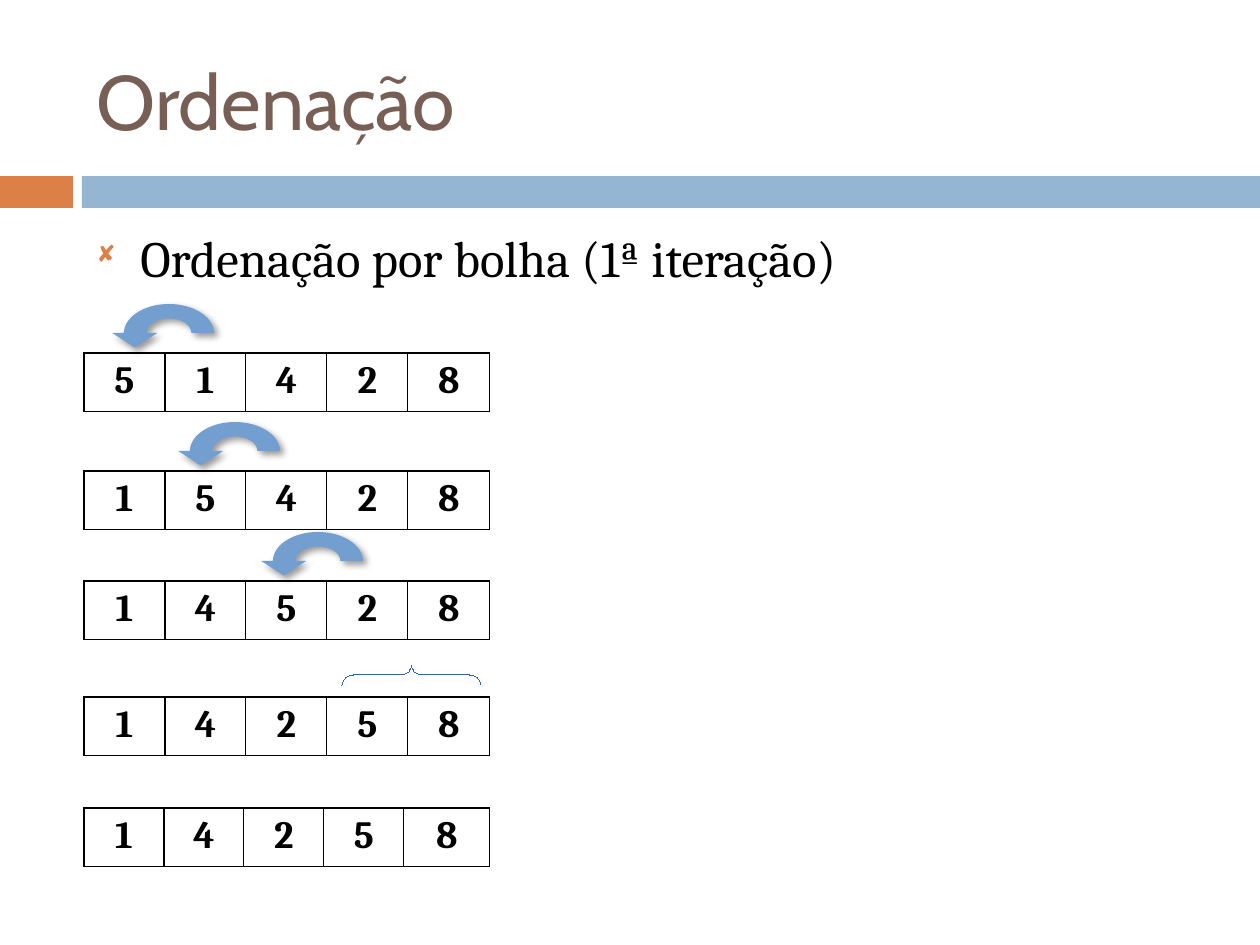
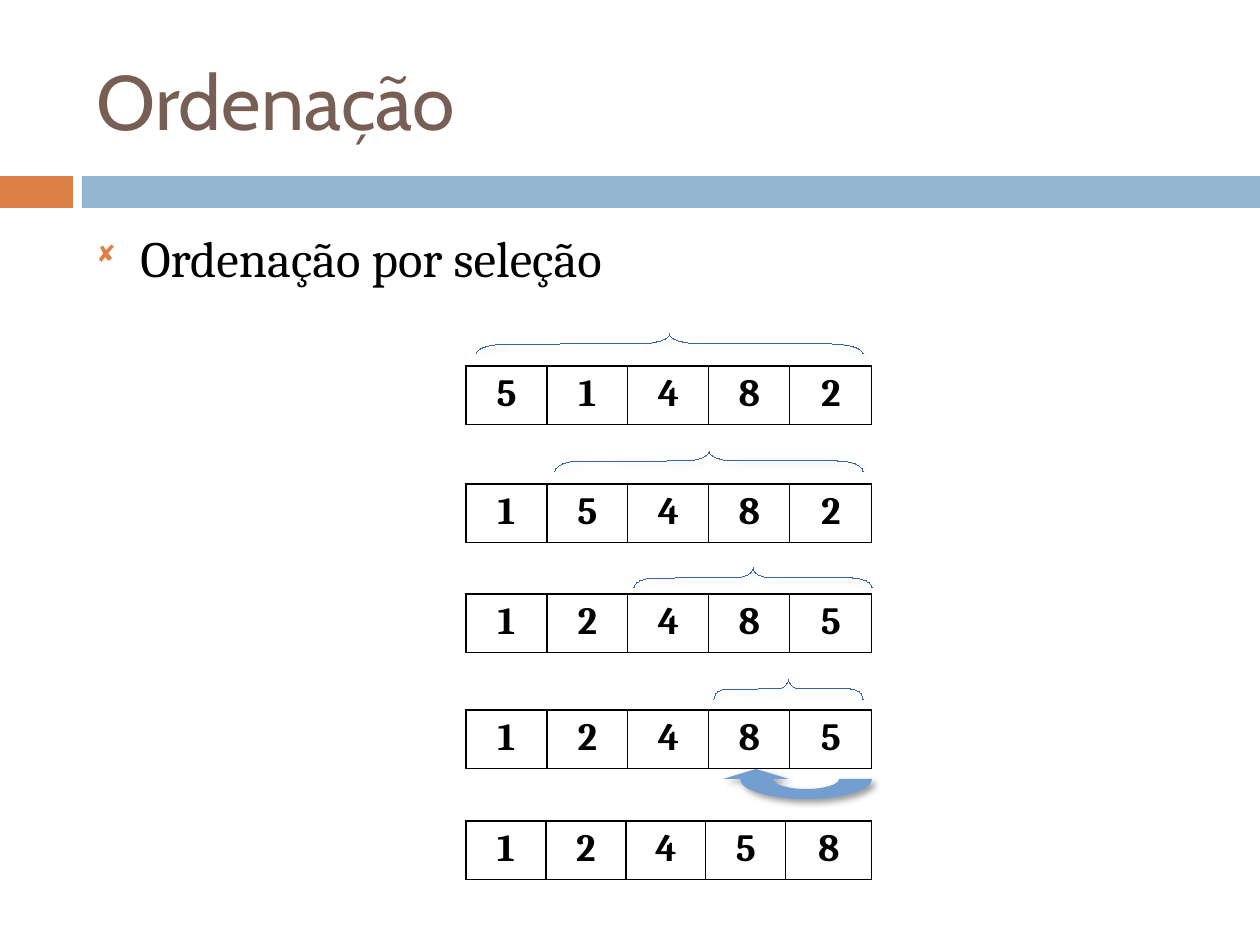
from lxml.etree import SubElement
from pptx import Presentation
from pptx.dml.color import RGBColor
from pptx.enum.shapes import MSO_SHAPE
from pptx.enum.text import MSO_ANCHOR, MSO_AUTO_SIZE, PP_ALIGN
from pptx.oxml.ns import qn
from pptx.util import Emu, Pt

BROWN = RGBColor(0x77, 0x5F, 0x55)
ORANGE = RGBColor(0xDD, 0x80, 0x47)
PALE = RGBColor(0x94, 0xB6, 0xD2)
BLUE = RGBColor(0x72, 0x9F, 0xCF)
NAVY = RGBColor(0x34, 0x65, 0xA4)
BLACK = RGBColor(0, 0, 0)

HEAD, BODY = "Cabin", "Cambria"
TITLE_ONLY = 5
CELL, HIGH, WIDE = 81, 58, 406
TOPS = (0, 118, 228, 344, 455)
EVEN = (CELL,) * 4
TIGHT = (80,) * 4
ROUND = 0.55  # handle length of a quarter ellipse, as a share of its radius


def px(n):
    return Emu(round(n * 914400 / 126))


def box(*lengths):
    return [px(n) for n in lengths]


def style(run, size, font, color, bold=False):
    run.font.size = Pt(size)
    run.font.name = font
    run.font.color.rgb = color
    run.font.bold = bold


def node(parent, tag, **attrs):
    return SubElement(parent, qn(tag), {key: str(val) for key, val in attrs.items()})


def shade(shape):
    """Give the shape a soft shadow down and to the right."""
    shape.shadow.inherit = False
    effects = shape._element.spPr.find(qn("a:effectLst"))
    outer = node(effects, "a:outerShdw", blurRad=Pt(4), dist=Pt(3),
                 dir=45 * 60000, algn="tl", rotWithShape=0)
    color = node(outer, "a:srgbClr", val=BLACK)
    node(color, "a:alpha", val=40000)


def band(slide, left, width, color):
    bar = slide.shapes.add_shape(MSO_SHAPE.RECTANGLE, *box(left, 176, width, 32))
    bar.shadow.inherit = False
    bar.fill.solid()
    bar.fill.fore_color.rgb = color
    bar.line.fill.background()


def title(slide, text, left, top, width, height):
    head = slide.shapes.title
    head.left, head.top, head.width, head.height = box(left, top, width, height)
    frame = head.text_frame
    frame.text = text
    frame.auto_size = MSO_AUTO_SIZE.NONE
    frame.vertical_anchor = MSO_ANCHOR.MIDDLE
    para = frame.paragraphs[0]
    para.alignment = PP_ALIGN.LEFT
    style(para.runs[0], 44, HEAD, BROWN)


def topic(slide, text, left, top, width, height):
    """Add the bulleted line below the bands."""
    frame = slide.shapes.add_textbox(*box(left, top, width, height)).text_frame
    frame.word_wrap = True
    frame.text = text
    para = frame.paragraphs[0]
    para.space_before = Pt(7)
    style(para.runs[0], 29, BODY, BLACK)
    props = para._p.get_or_add_pPr()
    props.set("marL", str(px(44)))
    props.set("indent", str(-px(44)))
    node(node(props, "a:buClr"), "a:srgbClr", val=ORANGE)
    node(props, "a:buSzPct", val=60000)
    node(props, "a:buFont", typeface="Wingdings", charset=2)
    node(props, "a:buChar", char="◻")


def edge(cell):
    """Draw thin black borders around a cell."""
    props = cell._tc.get_or_add_tcPr()
    for i, side in enumerate(("a:lnL", "a:lnR", "a:lnT", "a:lnB")):
        line = node(props, side, w=Pt(0.75))
        node(node(line, "a:solidFill"), "a:srgbClr", val=BLACK)
        props.remove(line)
        props.insert(i, line)


def array(slide, digits, left, top, cols):
    count = len(digits)
    table = slide.shapes.add_table(1, count, *box(left, top, WIDE, HIGH)).table
    table.first_row = table.horz_banding = False
    table.rows[0].height = px(HIGH)
    for i, width in enumerate((*cols, WIDE - sum(cols))):
        table.columns[i].width = px(width)
        cell = table.cell(0, i)
        cell.fill.background()
        edge(cell)
        cell.text = digits[i]
        para = cell.text_frame.paragraphs[0]
        para.alignment = PP_ALIGN.CENTER
        style(para.runs[0], 22, BODY, BLACK, bold=True)


def stack(slide, states, left, top):
    """Place the states of the array below each other."""
    for digits, shift in zip(states, TOPS):
        cols = TIGHT if shift == TOPS[-1] else EVEN
        array(slide, digits, left, top + shift, cols)


def arch(mid, base, wide, high):
    """Return start, handles and ends of two quarter ellipses, left to right."""
    bend, lift = ROUND * wide, ROUND * high
    return [
        (mid - wide, base),
        (mid - wide, base - lift), (mid - bend, base - high), (mid, base - high),
        (mid + bend, base - high), (mid + wide, base - lift), (mid + wide, base),
    ]


def curve(shape, first):
    """Turn three outline steps, from number first on, into one Bezier curve."""
    outline = next(shape._element.iter(qn("a:path")))
    steps = outline[first:first + 3]
    bezier = node(outline, "a:cubicBezTo")
    outline.insert(first, bezier)
    for step in steps:
        bezier.append(step[0])
        outline.remove(step)


def arrow(slide, mid, base, wide, high):
    """Bend an arrow leftward about its centre; a negative height bends it below."""
    tip = mid - 0.76 * wide
    points = [
        *arch(mid, base, wide / 2, high / 2),
        *reversed(arch(mid, base, wide, high)),
        (tip - wide / 2, base),
        (tip, base + high / 2),
        (tip + wide / 2, base),
    ]
    first, *rest = [box(*point) for point in points]
    pen = slide.shapes.build_freeform(*first)
    pen.add_line_segments(rest, close=True)
    shape = pen.convert_to_shape()
    for start in (11, 8, 4, 1):
        curve(shape, start)
    shape.fill.solid()
    shape.fill.fore_color.rgb = BLUE
    shape.line.fill.background()
    shade(shape)


def brace(slide, left, right, mid):
    """Span left to right with an upward brace centred on height mid."""
    span, thick = right - left, 20
    shape = slide.shapes.add_shape(
        MSO_SHAPE.LEFT_BRACE,
        *box((left + right - thick) / 2, mid - span / 2, thick, span))
    shape.rotation = 90
    shape.adjustments[0] = span / thick / 12
    shape.fill.background()
    shape.line.color.rgb = NAVY
    shape._element.spPr.find(qn("a:ln")).set("w", "0")
    shade(shape)


def page(deck, text):
    slide = deck.slides.add_slide(deck.slide_layouts[TITLE_ONLY])
    band(slide, 0, 73, ORANGE)
    band(slide, 82, 1178, PALE)
    title(slide, "Ordenação", 84, 32, 1124, 136)
    topic(slide, text, 84, 221, 1124, 659)
    return slide


def bubble(deck):
    slide = page(deck, "Ordenação por bolha (1ª iteração)")
    left, top = 84, 353
    stack(slide, ("51428", "15428", "14528", "14258", "14258"), left, top)
    for mid, shift in zip((85, 151, 234), TOPS):
        arrow(slide, left + mid, top + shift - 20, 45, 29)
    brace(slide, left + 258, left + 397, top + TOPS[3] - 22)


def select(deck):
    slide = page(deck, "Ordenação por seleção")
    left, top = 466, 366
    stack(slide, ("51482", "15482", "12485", "12485", "12458"), left, top)
    spans = ((10, 397, 22), (89, 397, 23), (168, 406, 16), (248, 397, 21))
    for (start, end, gap), shift in zip(spans, TOPS):
        brace(slide, left + start, left + end, top + shift - gap)
    arrow(slide, left + 340, top + TOPS[3] + 69, 66, -20)


def main():
    deck = Presentation()
    deck.slide_width, deck.slide_height = box(1260, 945)
    bubble(deck)
    select(deck)
    deck.save("out.pptx")


if __name__ == "__main__":
    main()
